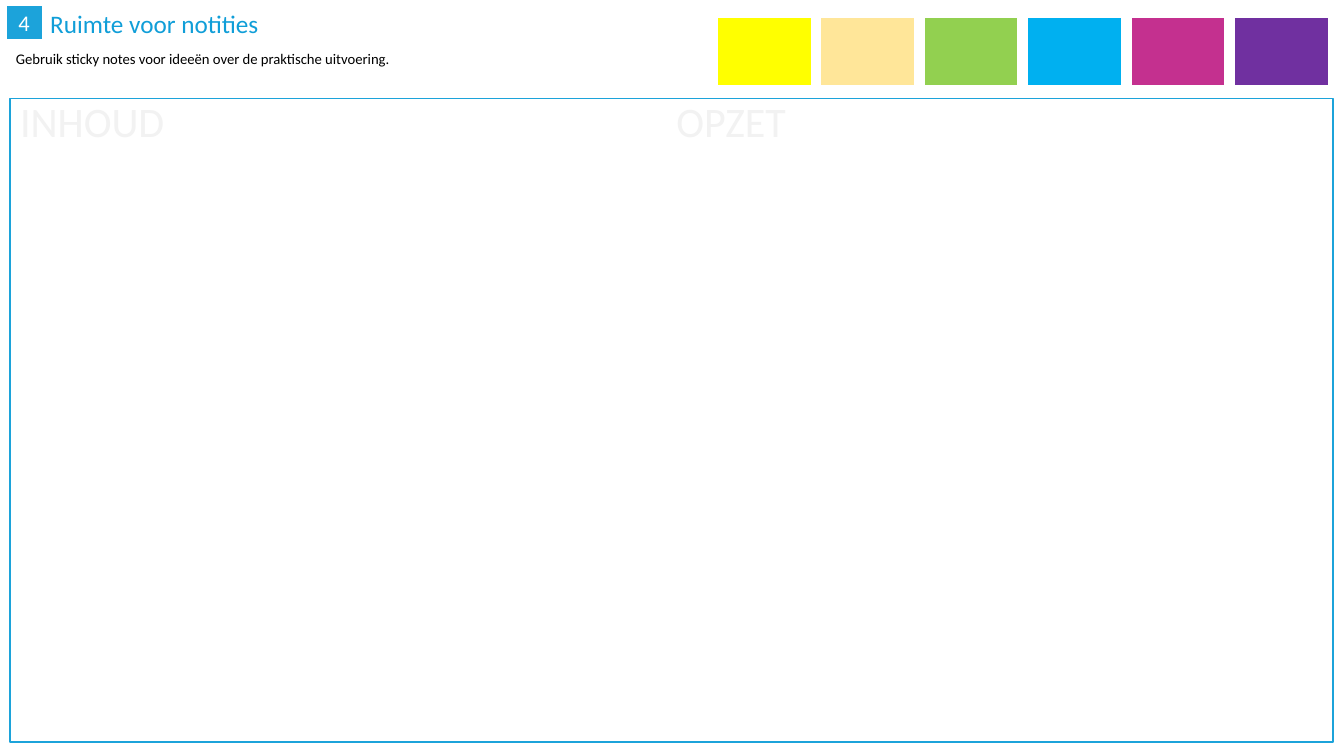
from dataclasses import dataclass

from pptx import Presentation
from pptx.dml.color import RGBColor
from pptx.enum.shapes import MSO_SHAPE
from pptx.enum.text import MSO_ANCHOR, PP_ALIGN
from pptx.util import Inches, Pt

RECTANGLE = MSO_SHAPE.RECTANGLE
MIDDLE, TOP = MSO_ANCHOR.MIDDLE, MSO_ANCHOR.TOP
CENTER, LEFT = PP_ALIGN.CENTER, PP_ALIGN.LEFT


@dataclass(frozen=True)
class Theme:
    font: str = "Calibri"
    accent: str = "1CA3DA"
    title: str = "109ED8"
    body: str = "000000"
    white: str = "FFFFFF"
    heading: str = "F2F2F2"
    notes: tuple = ("FFFF00", "FFE699", "92D050", "00B0F0", "C4308F", "7030A0")
    number_size: float = 16
    title_size: float = 18
    body_size: float = 10.5
    heading_size: float = 30


THEME = Theme()


def write(shape, text, size, color, align=LEFT, anchor=TOP):
    frame = shape.text_frame
    frame.word_wrap = True
    frame.vertical_anchor = anchor
    paragraph = frame.paragraphs[0]
    paragraph.alignment = align
    run = paragraph.add_run()
    run.text = text
    font_format = {"name": THEME.font, "size": Pt(size), "bold": False}
    for attribute, value in font_format.items():
        setattr(run.font, attribute, value)
    run.font.color.rgb = RGBColor.from_string(color)


def add_label(slide, box, text, size, color):
    label = slide.shapes.add_textbox(*map(Inches, box))
    write(label, text, size, color)


def add_rectangle(slide, box, fill, line, line_width):
    """Draw a flat rectangle; a fill of None leaves it open."""
    rectangle = slide.shapes.add_shape(RECTANGLE, *map(Inches, box))
    rectangle.shadow.inherit = False
    if fill is None:
        rectangle.fill.background()
    else:
        rectangle.fill.solid()
        rectangle.fill.fore_color.rgb = RGBColor.from_string(fill)
    rectangle.line.color.rgb = RGBColor.from_string(line)
    rectangle.line.width = Pt(line_width)
    return rectangle


def add_header(slide, box, number, title, instruction):
    left, top, width, height = box
    badge = add_rectangle(slide, (left, top, 0.36, 0.34),
                          THEME.accent, THEME.white, 1)
    write(badge, number, THEME.number_size, THEME.white, CENTER, MIDDLE)
    add_label(slide, (left + 0.34, top - 0.02, 6.94, 0.4),
              title, THEME.title_size, THEME.title)
    add_label(slide, (left, top + height - 0.28, width, 0.28),
              instruction, THEME.body_size, THEME.body)


def add_notes_area(slide, box, headings):
    """Frame the writing area and head its equal columns."""
    left, top, width, _ = box
    add_rectangle(slide, box, None, THEME.accent, 1)
    column_width = (width - 0.1) / len(headings)
    for column, heading in enumerate(headings):
        add_label(slide, (left + column * column_width, top - 0.08,
                          column_width, 0.6),
                  heading, THEME.heading_size, THEME.heading)


def add_sticky_notes(slide, box, note_width):
    """Spread one sticky note per colour evenly across the box."""
    left, top, width, height = box
    pitch = (width - note_width) / (len(THEME.notes) - 1)
    for index, color in enumerate(THEME.notes):
        add_rectangle(slide, (left + index * pitch, top, note_width, height),
                      color, THEME.white, 1.5)


def main():
    presentation = Presentation()
    presentation.slide_width = Inches(13.33)
    presentation.slide_height = Inches(7.5)
    slide = presentation.slides.add_slide(presentation.slide_layouts[6])
    add_header(slide, (0.06, 0.05, 13.13, 0.67), "4", "Ruimte voor notities",
               "Gebruik sticky notes voor ideeën over de praktische uitvoering.")
    add_notes_area(slide, (0.1, 0.98, 13.12, 6.38), ("INHOUD", "OPZET"))
    add_sticky_notes(slide, (7.11, 0.17, 6.07, 0.68), 0.94)
    presentation.save("out.pptx")


if __name__ == "__main__":
    main()
